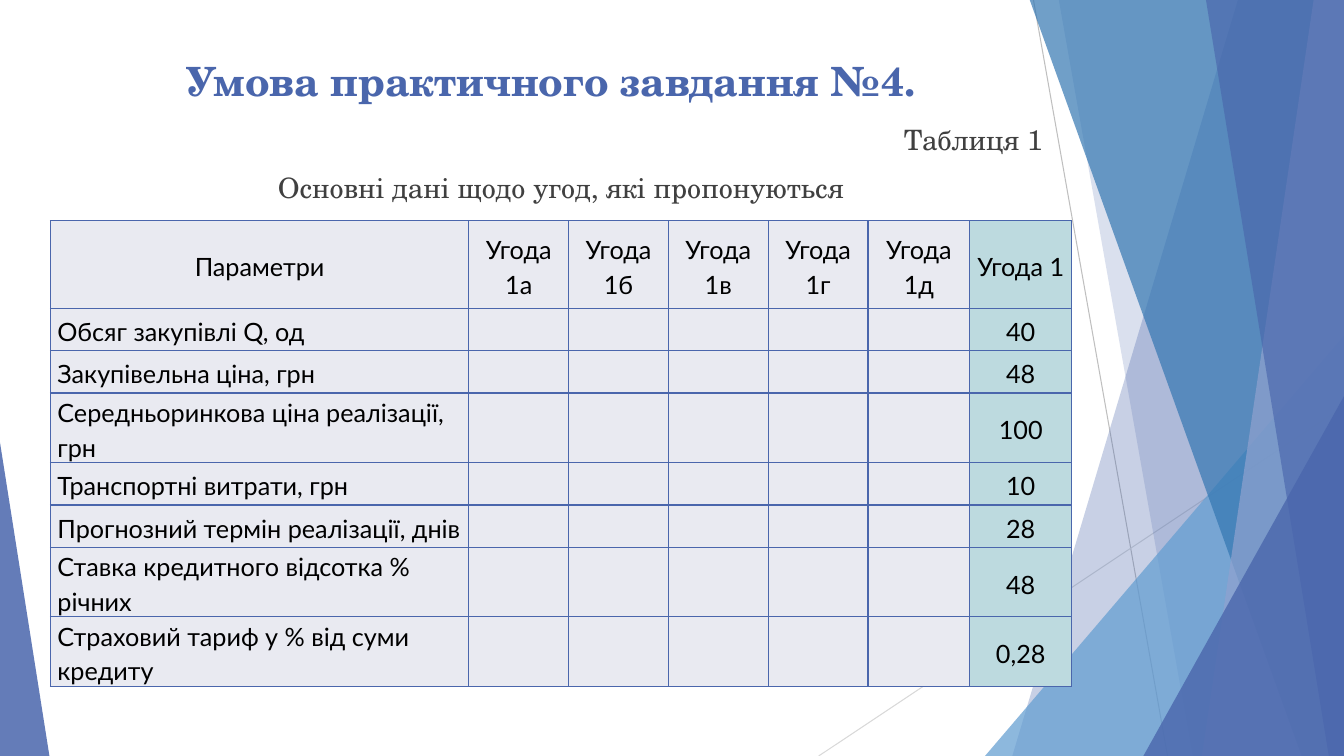
from lxml import etree
from pptx import Presentation
from pptx.dml.color import RGBColor
from pptx.enum.shapes import MSO_CONNECTOR, MSO_SHAPE
from pptx.enum.text import MSO_ANCHOR, PP_ALIGN
from pptx.oxml.ns import qn
from pptx.util import Inches, Pt

COLORS = {
    "blue": "4A66AC", "sky": "629DD1", "deep": "3477B2", "pale": "90A2CF",
    "gray": "BFBFBF", "light_gray": "D9D9D9", "text": "404040", "black": "000000",
    "cell": "E9EAF1", "deal": "BDDADF",
}
SERIF = "TeX Gyre Schola"
SANS = "Lato"
RIGHT, BOTTOM = 13.33, 7.5


def rgb(name):
    return RGBColor.from_string(COLORS[name])


def style_paragraph(p, text, font, size, color, align):
    p.text = text
    p.alignment = align
    p.font.name = font
    p.font.size = Pt(size)
    p.font.color.rgb = rgb(color)


prs = Presentation()
prs.slide_width, prs.slide_height = Inches(RIGHT), Inches(BOTTOM)
s = prs.slides.add_slide(prs.slide_layouts[6])

# Thin crossing lines
for x1, y1, x2, y2, color in [
    (10.25, 0, 11.58, BOTTOM, "gray"),
    (RIGHT, 4.03, 8.12, BOTTOM, "light_gray"),
]:
    line = s.shapes.add_connector(
        MSO_CONNECTOR.STRAIGHT, Inches(x1), Inches(y1), Inches(x2), Inches(y2))
    line.line.color.rgb = rgb(color)
    line.line.width = Pt(0.75)
    etree.SubElement(line._element.spPr, qn("a:effectLst"))

# Translucent facets, back to front: bands run from top x to bottom x and on to
# the right edge; triangles have left, top, width, height and apex position
facets = [
    ("band", (12.28, 10.04), "blue", 30),
    ("band", (10.5, 11.83), "blue", 20),
    ("triangle", (9.77, 3.33, 3.56, 4.17, 1), "sky", 72),
    ("band", (10.21, 12.91), "deep", 70),
    ("band", (13.03, 11.92), "pale", 70),
    ("band", (11.96, 13.18), "blue", 65),
    ("triangle", (11.34, 3.93, 1.99, 3.57, 1), "blue", 80),
    ("triangle", (0, 4.39, 0.49, 3.11, 0), "blue", 85),
]
for kind, geometry, color, opacity in facets:
    if kind == "band":
        top_x, bottom_x = geometry
        builder = s.shapes.build_freeform(Inches(top_x), Inches(-0.01))
        builder.add_line_segments(
            [(Inches(x), Inches(y)) for x, y in
             [(RIGHT, -0.01), (RIGHT, BOTTOM), (bottom_x, BOTTOM)]], close=True)
        sp = builder.convert_to_shape()
    else:
        *box, apex = geometry
        sp = s.shapes.add_shape(MSO_SHAPE.ISOSCELES_TRIANGLE, *map(Inches, box))
        sp.adjustments[0] = apex
    sp.shadow.inherit = False
    sp.line.fill.background()
    sp.fill.solid()
    sp.fill.fore_color.rgb = rgb(color)
    srgb = sp._element.spPr.find(qn("a:solidFill")).find(qn("a:srgbClr"))
    etree.SubElement(srgb, qn("a:alpha")).set("val", str(opacity * 1000))

# Title
tf = s.shapes.add_textbox(Inches(1.75), Inches(0.51), Inches(7.71), Inches(0.67)).text_frame
tf.word_wrap = True
style_paragraph(tf.paragraphs[0], "Умова практичного завдання №4.",
                SERIF, 28.8, "blue", PP_ALIGN.LEFT)
tf.paragraphs[0].font.bold = True

# Table number and caption
tf = s.shapes.add_textbox(Inches(0.69), Inches(1.17), Inches(9.75), Inches(4.08)).text_frame
tf.word_wrap = True
style_paragraph(tf.paragraphs[0], "Таблиця 1", SERIF, 20, "text", PP_ALIGN.RIGHT)
style_paragraph(tf.add_paragraph(), "Основні дані щодо угод, які пропонуються",
                SERIF, 20, "text", PP_ALIGN.CENTER)
for p in tf.paragraphs:
    p.space_before = Pt(10)

# Deals table
header = ["Параметри", "Угода 1а", "Угода 1б", "Угода 1в", "Угода 1г", "Угода 1д", "Угода 1"]
parameters = [
    ("Обсяг закупівлі Q, од", "40"),
    ("Закупівельна ціна, грн", "48"),
    ("Середньоринкова ціна реалізації, грн", "100"),
    ("Транспортні витрати, грн", "10"),
    ("Прогнозний термін реалізації, днів", "28"),
    ("Ставка кредитного відсотка % річних", "48"),
    ("Страховий тариф у % від суми кредиту", "0,28"),
]
rows = [header] + [[name] + [""] * 5 + [value] for name, value in parameters]
col_widths = [4.15] + [0.99] * 4 + [1.01] * 2
row_heights = [0.87, 0.42, 0.42, 0.69, 0.42, 0.42, 0.69, 0.69]

table = s.shapes.add_table(
    len(rows), len(header), Inches(0.5), Inches(2.19),
    Inches(sum(col_widths)), Inches(sum(row_heights))).table
for column, width in zip(table.columns, col_widths):
    column.width = Inches(width)
for row, height in zip(table.rows, row_heights):
    row.height = Inches(height)

for r, texts in enumerate(rows):
    for c, text in enumerate(texts):
        cell = table.cell(r, c)
        cell.vertical_anchor = MSO_ANCHOR.MIDDLE
        cell.margin_left = cell.margin_right = Inches(0.07)
        cell.margin_top = cell.margin_bottom = 0
        p = cell.text_frame.paragraphs[0]
        align = PP_ALIGN.LEFT if r and c == 0 else PP_ALIGN.CENTER
        style_paragraph(p, text, SANS, 18, "black", align)
        p.font.bold = False
        p.line_spacing = 1.15
        p.space_after = Pt(10)
        tc_pr = cell._tc.get_or_add_tcPr()
        for side in ("lnL", "lnR", "lnT", "lnB"):
            border = etree.SubElement(tc_pr, qn(f"a:{side}"), w=str(Pt(1)))
            fill = etree.SubElement(border, qn("a:solidFill"))
            etree.SubElement(fill, qn("a:srgbClr"), val=COLORS["blue"])
        cell.fill.solid()
        cell.fill.fore_color.rgb = rgb("deal" if c == len(header) - 1 else "cell")

prs.save("out.pptx")
